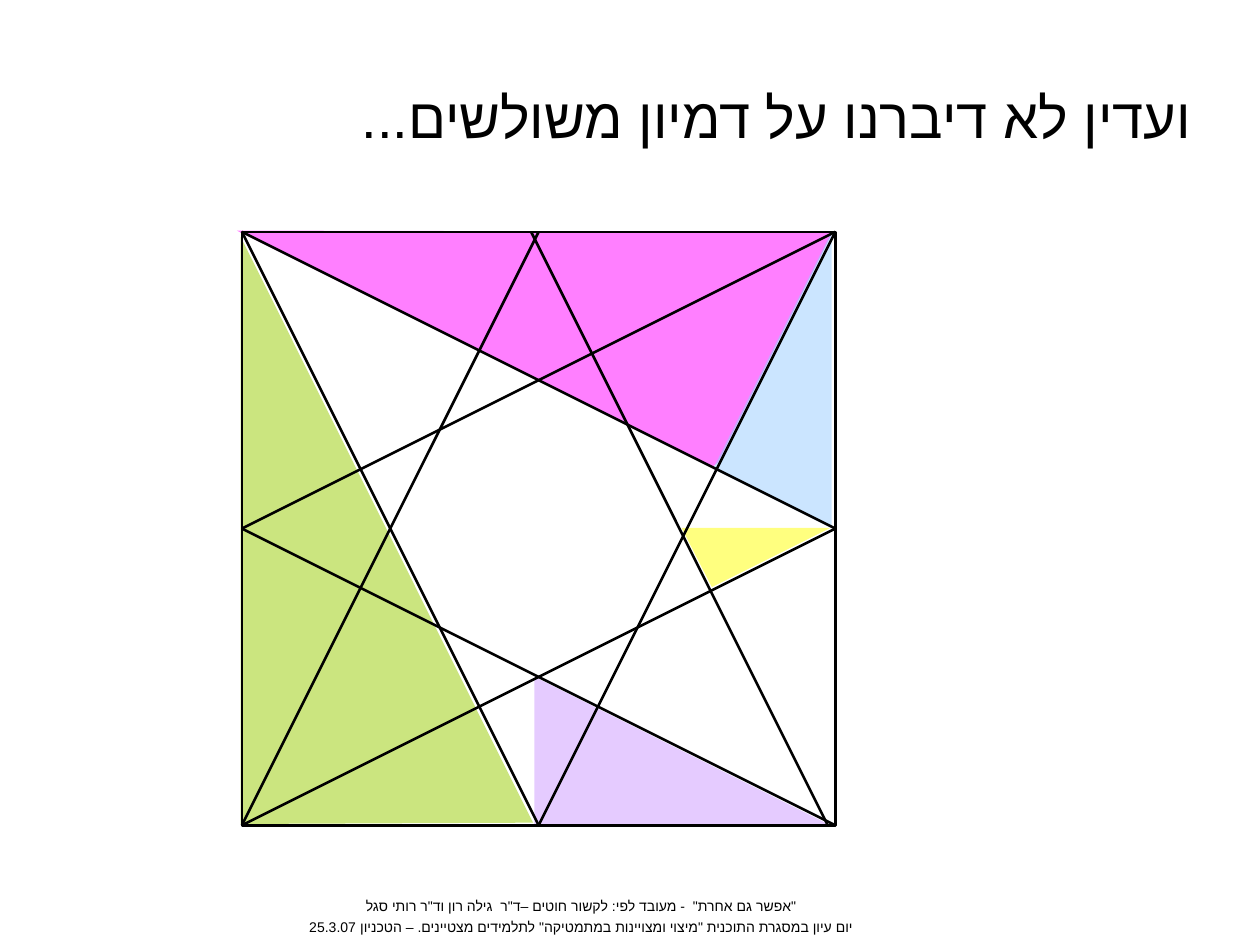
from lxml.etree import SubElement
from pptx import Presentation
from pptx.dml.color import RGBColor as RGB
from pptx.enum.shapes import MSO_CONNECTOR as CONN, MSO_SHAPE as SHAPE
from pptx.enum.text import MSO_ANCHOR as ANCHOR, PP_ALIGN as ALIGN
from pptx.oxml.ns import qn
from pptx.util import Inches, Pt

COLORS = {
    "ink": "000000",
    "green": "99CC00",
    "pink": "FF00FF",
    "yellow": "FFFF00",
    "blue": "99CCFF",
    "violet": "CC99FF",
}
LEFT, TOP, SIDE = 1.92, 1.84, 4.71
RIGHT, BASE = LEFT + SIDE, TOP + SIDE
MID_X, MID_Y = LEFT + SIDE / 2, TOP + SIDE / 2
SHIFT = 0.06

AREAS = [
    ("green", [(4.23, 6.53), (1.91, 6.54), (1.91, 1.88)]),
    ("pink", [(1.88, 1.83), (6.61, 1.84), (5.7, 3.67), (5.65, 3.71)]),
    ("yellow", [(5.41, 4.19), (6.59, 4.19), (5.65, 4.66)]),
    ("blue", [(6.6, 1.84), (6.6, 4.19), (5.66, 3.72)]),
    ("violet", [(4.24, 5.37), (4.24, 6.55), (6.59, 6.55)]),
]
LINES = [
    (LEFT, TOP, RIGHT, MID_Y),
    (LEFT, MID_Y, RIGHT, TOP),
    (LEFT, BASE, RIGHT, MID_Y),
    (LEFT, MID_Y, RIGHT, BASE),
    (MID_X, BASE, RIGHT, TOP),
    (LEFT, TOP, MID_X, BASE),
    (MID_X, TOP, LEFT, BASE),
    (MID_X - SHIFT, TOP, RIGHT - SHIFT, BASE),
]
TITLE = "ועדין לא דיברנו על דמיון משולשים..."
CREDIT = [
    '"אפשר גם אחרת"  - מעובד לפי: לקשור חוטים –ד"ר  גילה רון וד"ר רותי סגל',
    'יום עיון במסגרת התוכנית "מיצוי ומצויינות במתמטיקה" לתלמידים מצטיינים. – הטכניון 25.3.07',
]


def color(name):
    return RGB.from_string(COLORS[name])


def add_area(slide, name, points):
    dots = [(Inches(x), Inches(y)) for x, y in points]
    path = slide.shapes.build_freeform(*dots[0])
    path.add_line_segments(dots[1:], close=True)
    area = path.convert_to_shape()
    area.shadow.inherit = False
    area.fill.solid()
    area.fill.fore_color.rgb = color(name)
    tint = area.fill._xPr.find(qn("a:solidFill"))[0]
    SubElement(tint, qn("a:alpha"), val="50000")
    area.line.fill.background()


def set_line(shape):
    shape.line.color.rgb = color("ink")
    shape.line.width = Pt(1.5)


def add_square(group):
    box = group.shapes.add_shape(
        SHAPE.RECTANGLE, Inches(LEFT), Inches(TOP), Inches(SIDE), Inches(SIDE))
    box.shadow.inherit = False
    box.fill.background()
    set_line(box)


def add_line(group, ends):
    line = group.shapes.add_connector(CONN.STRAIGHT, *map(Inches, ends))
    set_line(line)
    SubElement(line._element.spPr, qn("a:effectLst"))


def add_text(slide, place, rows, size, align, anchor=ANCHOR.TOP):
    frame = slide.shapes.add_textbox(*map(Inches, place)).text_frame
    frame.word_wrap = True
    frame.vertical_anchor = anchor
    frame.text = "\n".join(rows)
    for i, para in enumerate(frame.paragraphs):
        para.alignment = align
        if i:
            para.space_before = Pt(size * 0.3)
        props = para._p.get_or_add_pPr()
        props.set("rtl", "1")
        font = para.font
        font.size = Pt(size)
        font.color.rgb = color("ink")
        font.name = "Arial"
        SubElement(props.find(qn("a:defRPr")), qn("a:cs"), typeface="Arial")


def main():
    deck = Presentation()
    deck.slide_width, deck.slide_height = Inches(10), Inches(7.5)
    slide = deck.slides.add_slide(deck.slide_layouts[6])
    for name, points in AREAS:
        add_area(slide, name, points)
    group = slide.shapes.add_group_shape()
    add_square(group)
    for ends in LINES:
        add_line(group, ends)
    add_text(slide, (0.56, 0.3, 9, 1.25), [TITLE], 32, ALIGN.RIGHT, ANCHOR.MIDDLE)
    add_text(slide, (0.94, 7.07, 7.35, 0.41), CREDIT, 8, ALIGN.CENTER)
    deck.save("out.pptx")


if __name__ == "__main__":
    main()
